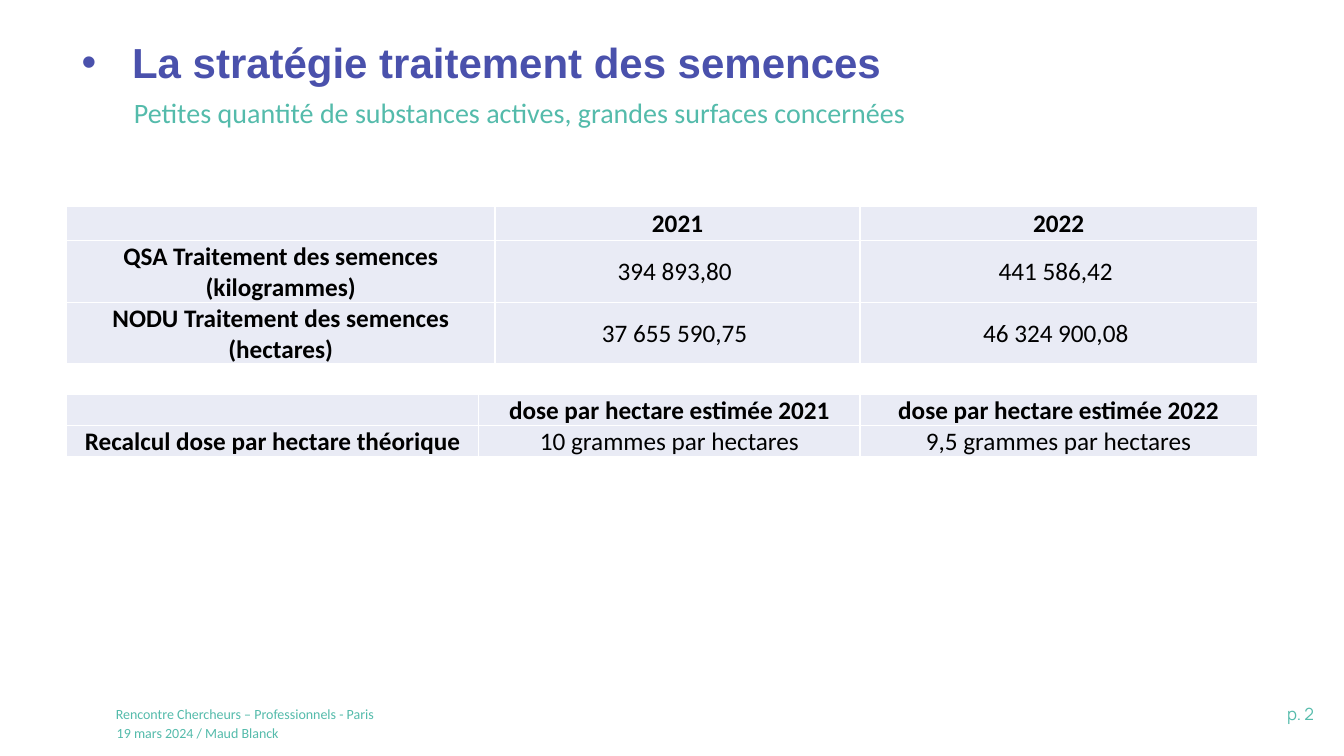
from dataclasses import dataclass

from lxml.etree import SubElement as add_element
from pptx import Presentation
from pptx.dml.color import RGBColor
from pptx.enum.text import MSO_ANCHOR as Anchor, MSO_AUTO_SIZE as AutoSize, PP_ALIGN as Align
from pptx.oxml.ns import qn
from pptx.util import Inches, Pt

COLORS = {
    "title": "4A51AC",
    "accent": "54BBAB",
    "cell": "E9EBF5",
    "border": "FFFFFF",
    "text": "000000",
}


@dataclass
class Label:
    text: str
    left: float
    top: float
    width: float
    height: float
    size: float
    font: str = "Calibri"
    align: Align = Align.LEFT
    line_spacing: float = 1.0


@dataclass
class DataTable:
    top: float
    columns: list[float]
    heights: list[float]
    anchor: Anchor
    rows: list[list[str]]


LABELS = [
    Label("Petites quantité de substances actives, grandes surfaces concernées",
          1.23, 0.94, 10.76, 0.74, 20, line_spacing=0.9),
    Label("Rencontre Chercheurs – Professionnels - Paris", 1.05, 6.95, 7.34, 0.28, 10),
    Label("19 mars 2024 / Maud Blanck", 1.06, 7.14, 7.34, 0.28, 10),
    Label("p. 2", 10.85, 6.93, 2.28, 0.3, 12, font="Manrope", align=Align.RIGHT),
]

TABLES = [
    DataTable(2.05, [4.25, 3.62, 3.94], [0.34, 0.61, 0.61], Anchor.MIDDLE, [
        ["", "2021", "2022"],
        ["QSA Traitement des semences (kilogrammes)", "394 893,80 ", "441 586,42 "],
        ["NODU Traitement des semences (hectares)", "37 655 590,75 ", "46 324 900,08 "],
    ]),
    DataTable(3.91, [4.09, 3.78, 3.94], [0.31, 0.31], Anchor.BOTTOM, [
        ["", "dose par hectare estimée 2021", "dose par hectare estimée 2022"],
        ["Recalcul dose par hectare théorique", "10 grammes par hectares",
         "9,5 grammes par hectares"],
    ]),
]


def write(para, text: str, *, size: float, color: str, font: str = "Calibri",
          bold: bool = False, align: Align = Align.LEFT, line_spacing: float = 1.0) -> None:
    para.alignment = align
    para.line_spacing = line_spacing
    para.space_before = Pt(0)
    span = para.add_run()
    span.text = text
    span.font.size = Pt(size)
    span.font.name = font
    span.font.bold = bold
    span.font.color.rgb = RGBColor.from_string(COLORS[color])


def set_margins(target, left: float, top: float, right: float, bottom: float) -> None:
    target.margin_left = Inches(left)
    target.margin_top = Inches(top)
    target.margin_right = Inches(right)
    target.margin_bottom = Inches(bottom)


def add_title(page) -> None:
    title = page.shapes.title
    title.left, title.top = Inches(0.81), Inches(0.16)
    title.width, title.height = Inches(11.17), Inches(0.97)
    frame = title.text_frame
    frame.word_wrap = True
    frame.auto_size = AutoSize.NONE
    frame.vertical_anchor = Anchor.MIDDLE
    set_margins(frame, 0, 0.05, 0.1, 0.05)
    para = frame.paragraphs[0]
    properties = para._p.get_or_add_pPr()
    properties.set("marL", str(Inches(0.5)))
    properties.set("indent", str(-Inches(0.5)))
    add_element(properties, qn("a:buFont"), typeface="Arial")
    add_element(properties, qn("a:buChar"), char="•")
    write(para, "La stratégie traitement des semences", size=30, color="title",
          font="Arial", bold=True, line_spacing=0.9)


def add_label(page, label: Label) -> None:
    box = page.shapes.add_textbox(Inches(label.left), Inches(label.top),
                                  Inches(label.width), Inches(label.height))
    box.text_frame.word_wrap = True
    write(box.text_frame.paragraphs[0], label.text, size=label.size, color="accent",
          font=label.font, align=label.align, line_spacing=label.line_spacing)


def add_borders(cell) -> None:
    properties = cell._tc.get_or_add_tcPr()
    for side in ("lnL", "lnR", "lnT", "lnB"):
        line = add_element(properties, qn(f"a:{side}"), w=str(Pt(1)))
        fill = add_element(line, qn("a:solidFill"))
        add_element(fill, qn("a:srgbClr"), val=COLORS["border"])


def add_data_table(page, data: DataTable) -> None:
    table = page.shapes.add_table(
        len(data.rows), len(data.columns), Inches(0.66), Inches(data.top),
        Inches(sum(data.columns)), Inches(sum(data.heights))).table
    table.first_row = False
    table.horz_banding = False
    for column, width in zip(table.columns, data.columns):
        column.width = Inches(width)
    for row, height in zip(table.rows, data.heights):
        row.height = Inches(height)
    for row_index, texts in enumerate(data.rows):
        for column_index, text in enumerate(texts):
            cell = table.cell(row_index, column_index)
            set_margins(cell, 0.01, 0.01, 0.01, 0)
            cell.vertical_anchor = data.anchor
            add_borders(cell)
            cell.fill.solid()
            cell.fill.fore_color.rgb = RGBColor.from_string(COLORS["cell"])
            if text:
                write(cell.text_frame.paragraphs[0], text, size=18, color="text",
                      bold=row_index == 0 or column_index == 0, align=Align.CENTER)


def main() -> None:
    deck = Presentation()
    deck.slide_width, deck.slide_height = Inches(13.33), Inches(7.5)
    page = deck.slides.add_slide(deck.slide_layouts[5])
    add_title(page)
    for label in LABELS:
        add_label(page, label)
    for data in TABLES:
        add_data_table(page, data)
    deck.save("out.pptx")


if __name__ == "__main__":
    main()
